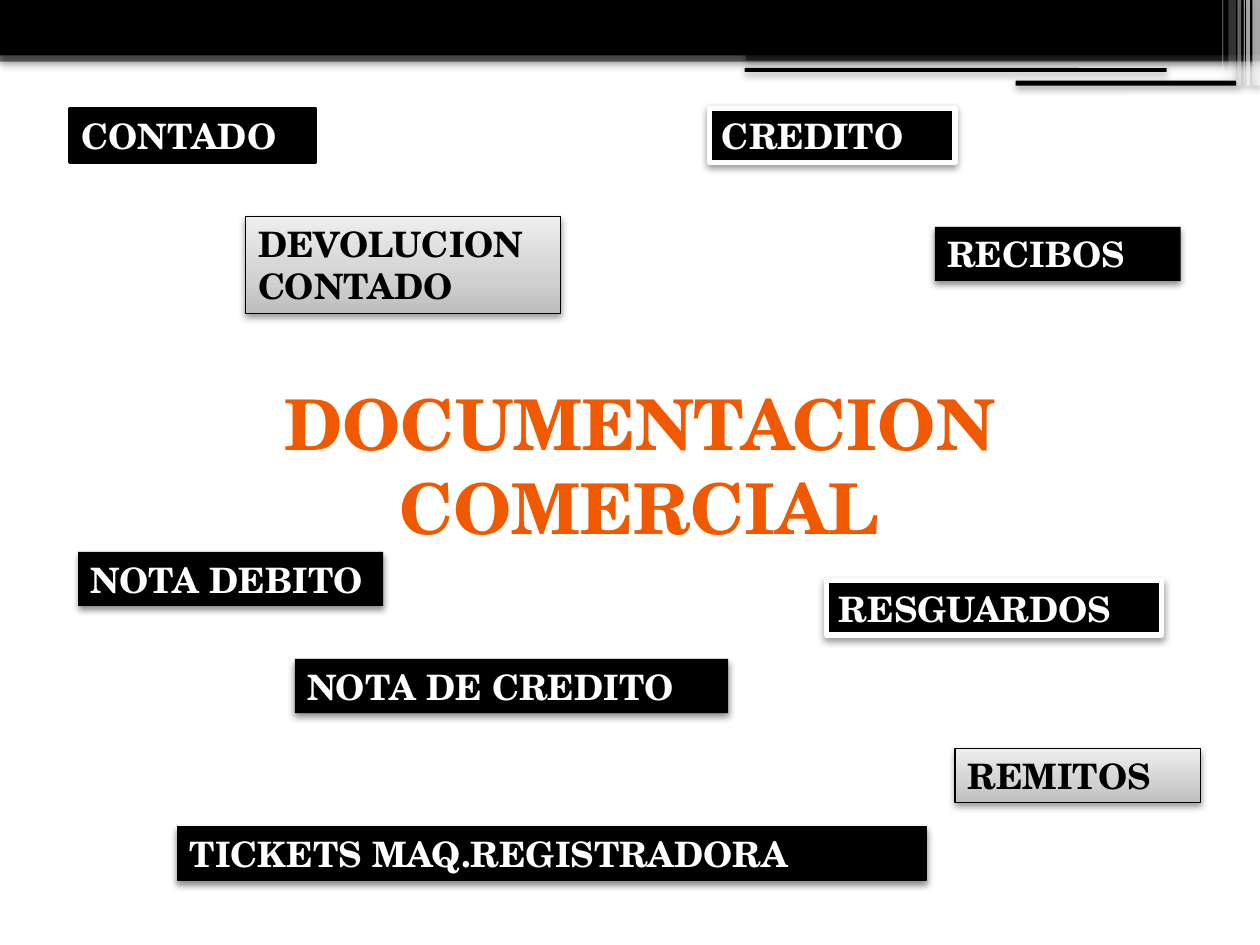
"""Build the slide that maps the types of commercial documents."""
from lxml.etree import SubElement
from pptx import Presentation
from pptx.dml.color import RGBColor
from pptx.enum.shapes import MSO_SHAPE as Shape
from pptx.enum.text import MSO_ANCHOR as Anchor, MSO_AUTO_SIZE as AutoSize, PP_ALIGN as Align
from pptx.oxml.ns import qn
from pptx.util import Inches, Pt

THEME = {
    "font": "TeX Gyre Schola", "title_size": 40, "label_size": 20,
    "black": "000000", "white": "FFFFFF", "accent": "F15900",
    "gradient": [(0, "BDBDBD"), (35, "D1D1D1"), (100, "EEEEEE")],
}
SOFT, DEEP = (40, 4.1), (45, 4)

STYLES = {
    "flat": {"fill": "black", "text": "white", "line": ("black", 2), "shadow": None},
    "framed": {"fill": "black", "text": "white", "line": ("white", 3), "shadow": SOFT},
    "raised": {"fill": "black", "text": "white", "line": None, "shadow": DEEP},
    "outlined": {"fill": "black", "text": "white", "line": ("black", 0.75), "shadow": DEEP},
    "silver": {"fill": "gradient", "text": "black", "line": ("black", 0.75), "shadow": SOFT},
}

TITLE = ("DOCUMENTACION COMERCIAL", (2.03, 2.97, 6.09, 1.43))
DOCUMENTS = [
    ("CONTADO", "flat", (0.55, 0.86, 1.95, 0.43)),
    ("REMITOS", "silver", (7.58, 5.94, 1.95, 0.43)),
    ("CREDITO", "framed", (5.63, 0.86, 1.95, 0.43)),
    ("RECIBOS", "raised", (7.42, 1.8, 1.95, 0.43)),
    ("NOTA DE CREDITO", "raised", (2.34, 5.23, 3.44, 0.43)),
    ("DEVOLUCION CONTADO", "silver", (1.95, 1.72, 2.5, 0.77)),
    ("NOTA DEBITO", "raised", (0.62, 4.38, 2.42, 0.43)),
    ("TICKETS MAQ.REGISTRADORA", "outlined", (1.41, 6.56, 5.94, 0.43)),
    ("RESGUARDOS", "framed", (6.56, 4.61, 2.66, 0.43)),
]

BANDS = [
    ((0, 0.4, 10, 0.09), 50),
    ((0, 0, 10, 0.34), 100),
    ((0, 0.34, 10, 0.1), 100),
    ((5.92, 0.29, 4.08, 0.1), 100),
    ((5.92, 0.28, 4.08, 0.2), 50),
]
RULES = [(5.91, 0.54, 3.35, 0.03), (8.06, 0.64, 1.75, 0.04)]
STRIPES = [
    (9.94, 0.06, 0.68, 66), (9.89, 0.03, 0.68, 66), (9.87, 0.01, 0.68, 60),
    (9.82, 0.03, 0.68, 40), (9.75, 0.06, 0.64, 20), (9.7, 0.01, 0.64, 31),
]


def rgb(name):
    return RGBColor.from_string(THEME[name])


def add_color(parent, value, opacity=100):
    color = SubElement(parent, qn("a:srgbClr"), val=value)
    if opacity < 100:
        SubElement(color, qn("a:alpha"), val=str(opacity * 1000))


def paint(shape, fill, opacity=100):
    if fill == "gradient":
        shape.fill.gradient()
        shape.fill.gradient_angle = 90
        stops = shape.element.spPr.find(qn("a:gradFill")).find(qn("a:gsLst"))
        for stop in list(stops):
            stops.remove(stop)
        for position, value in THEME["gradient"]:
            add_color(SubElement(stops, qn("a:gs"), pos=str(position * 1000)), value)
        return
    shape.fill.solid()
    shape.fill.fore_color.rgb = rgb(fill)
    if opacity < 100:
        color = shape.element.spPr.find(qn("a:solidFill"))[0]
        SubElement(color, qn("a:alpha"), val=str(opacity * 1000))


def add_box(slide, box, fill, opacity=100, line=None, shadow=SOFT, kind=Shape.RECTANGLE):
    shape = slide.shapes.add_shape(kind, *map(Inches, box))
    paint(shape, fill, opacity)
    if line:
        shape.line.color.rgb = rgb(line[0])
        shape.line.width = Pt(line[1])
    else:
        shape.line.fill.background()
    shape.shadow.inherit = False
    if shadow:
        strength, blur = shadow
        effects = shape.element.spPr.find(qn("a:effectLst"))
        outer = SubElement(effects, qn("a:outerShdw"), blurRad=str(Pt(blur)), dist=str(Pt(2)),
                           dir="5400000", rotWithShape="0")
        add_color(outer, THEME["black"], strength)
    return shape


def write(shape, text, size, color, align, anchor):
    frame = shape.text_frame
    frame.text = text
    frame.word_wrap = True
    frame.auto_size = AutoSize.NONE
    frame.vertical_anchor = anchor
    paragraph = frame.paragraphs[0]
    paragraph.alignment = align
    font = paragraph.font
    font.name, font.size, font.bold = THEME["font"], Pt(THEME[size]), True
    font.color.rgb = rgb(color)


def add_header(slide):
    for box, opacity in BANDS:
        add_box(slide, box, "black", opacity)
    for box in RULES:
        add_box(slide, box, "black", kind=Shape.ROUNDED_RECTANGLE)
    for left, width, height, opacity in STRIPES:
        add_box(slide, (left, 0, width, height), "white", opacity)


def add_title(slide):
    text, box = TITLE
    title = slide.shapes.title
    title.left, title.top, title.width, title.height = map(Inches, box)
    write(title, text, "title_size", "accent", Align.CENTER, Anchor.MIDDLE)


def add_documents(slide):
    for text, style_name, box in DOCUMENTS:
        style = STYLES[style_name]
        label = add_box(slide, box, style["fill"], line=style["line"], shadow=style["shadow"])
        write(label, text, "label_size", style["text"], Align.LEFT, Anchor.TOP)


def main():
    deck = Presentation()
    deck.slide_width, deck.slide_height = Inches(10), Inches(7.5)
    slide = deck.slides.add_slide(deck.slide_layouts[5])
    add_header(slide)
    add_title(slide)
    add_documents(slide)
    deck.save("out.pptx")


if __name__ == "__main__":
    main()
